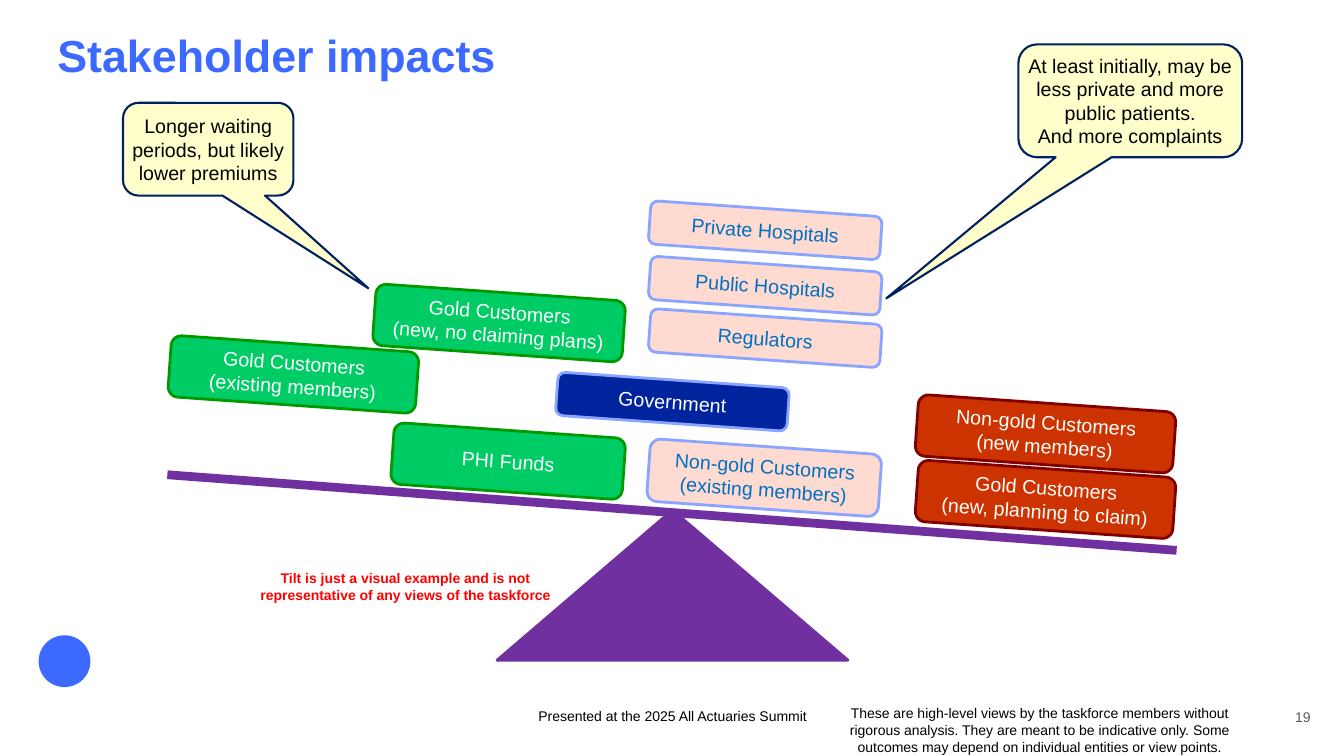
from dataclasses import dataclass

from lxml.etree import SubElement
from pptx import Presentation
from pptx.dml.color import RGBColor
from pptx.enum.shapes import MSO_CONNECTOR as Connector, MSO_SHAPE as Preset
from pptx.enum.text import MSO_ANCHOR as Anchor, PP_ALIGN as Align
from pptx.oxml.ns import qn
from pptx.util import Inches, Pt

COLUMNS, ROWS = 133.3, 75
CELL = Inches(7.5) / ROWS
TILT = 4
FONT = "Arial"

COLORS = {
    "brand": "3C69FF", "page": "5B5B5B", "black": "000000", "warning": "FF0000",
    "seesaw": "7030A0", "note": "FFFFCC", "note_edge": "002060", "white": "FFFFFF",
    "gain": "00CC66", "gain_edge": "009900",
    "neutral": "FFDAD1", "neutral_edge": "8AA5FF", "neutral_text": "0070C0",
    "state": "00249E", "loss": "CC3300", "loss_edge": "800000",
}

# Stakeholder group: fill, edge, text
GROUPS = {
    "gain": ("gain", "gain_edge", "white"),
    "neutral": ("neutral", "neutral_edge", "neutral_text"),
    "state": ("state", "neutral_edge", "white"),
    "loss": ("loss", "loss_edge", "white"),
}

# Group, column, row, width, height, wording
STAKEHOLDERS = [
    ("gain", 22.3, 22.7, 23, 6.1, "PHI Funds"),
    ("gain", 0.2, 14.1, 24.6, 6.1, "Gold Customers\v(existing members)"),
    ("gain", 20.5, 9, 24.8, 6.1, "Gold Customers\v(new, no claiming plans)"),
    ("state", 38.6, 17.7, 23, 4.3, "Government"),
    ("neutral", 47.8, 0.7, 23, 4.3, "Private Hospitals"),
    ("neutral", 47.8, 6.2, 23, 4.3, "Public Hospitals"),
    ("neutral", 47.8, 11.4, 23, 4.3, "Regulators"),
    ("neutral", 47.7, 24.3, 23, 6.2, "Non-gold Customers\v(existing members)"),
    ("loss", 74.3, 26.5, 25.6, 6.1, "Gold Customers\n(new, planning to claim)"),
    ("loss", 74.3, 20, 25.6, 6.1, "Non-gold Customers\n(new members)"),
]


@dataclass
class Box:
    """A region measured in grid columns and rows."""
    left: float
    top: float
    width: float
    height: float

    def within(self, column, row, width, height):
        return Box(self.left + column, self.top + row, width, height)

    def lengths(self):
        return [round(n * CELL) for n in (self.left, self.top, self.width, self.height)]


def color(name):
    return RGBColor.from_string(COLORS[name])


def write(frame, wording, size, ink, align=Align.CENTER, anchor=Anchor.MIDDLE,
          bold=False, inset=(0, 0)):
    frame.word_wrap = True
    frame.vertical_anchor = anchor
    frame.margin_left = frame.margin_right = Inches(inset[0])
    frame.margin_top = frame.margin_bottom = Inches(inset[1])
    frame.text = wording
    for paragraph in frame.paragraphs:
        paragraph.alignment = align
        font = paragraph.font
        font.name, font.size, font.bold = FONT, Pt(size), bold
        font.color.rgb = color(ink)


def add_text(slide, box, wording, size, ink, **style):
    write(slide.shapes.add_textbox(*box.lengths()).text_frame, wording, size, ink, **style)


def add_figure(slide, preset, box, fill, edge, weight):
    figure = slide.shapes.add_shape(preset, *box.lengths())
    figure.shadow.inherit = False
    figure.fill.solid()
    figure.fill.fore_color.rgb = color(fill)
    figure.line.color.rgb = color(edge)
    figure.line.width = Pt(weight)
    return figure


def draw_header(slide, box):
    add_text(slide, box, "Stakeholder impacts", 32, "brand", align=Align.LEFT,
             anchor=Anchor.TOP, bold=True, inset=(0.1, 0.05))


def draw_seesaw(slide, box):
    # Fulcrum and beam
    add_figure(slide, Preset.ISOSCELES_TRIANGLE, box.within(32.7, 30.6, 34.8, 14.9),
               "seesaw", "seesaw", 2)
    left, top, width, drop = box.within(0, 27.1, box.width, 7.5).lengths()
    beam = slide.shapes.add_connector(Connector.STRAIGHT, left, top, left + width, top + drop)
    beam.line.color.rgb = color("seesaw")
    beam.line.width = Pt(6.25)
    SubElement(beam.element.spPr, qn("a:effectLst"))

    # Stakeholders tilted with the beam
    for group, *place, wording in STAKEHOLDERS:
        fill, edge, ink = GROUPS[group]
        block = add_figure(slide, Preset.ROUNDED_RECTANGLE, box.within(*place), fill, edge, 2)
        block.rotation = TILT
        write(block.text_frame, wording, 14, ink, inset=(0.1, 0.05))

    # Caveat beside the fulcrum
    add_text(slide, box.within(8.8, 36.3, 29.6, 3.8),
             "Tilt is just a visual example and is not representative of any views "
             "of the taskforce", 10, "warning", bold=True)


def draw_callout(slide, box, tip, wording):
    callout = add_figure(slide, Preset.ROUNDED_RECTANGULAR_CALLOUT, box,
                         "note", "note_edge", 1.5)
    callout.adjustments[0], callout.adjustments[1] = tip
    write(callout.text_frame, wording, 14, "black", inset=(0.02, 0.02))


def draw_footer(slide, box):
    # Plain emblem
    add_figure(slide, Preset.OVAL, box.within(3.9, 0, 5, 5), "brand", "brand", 1)
    # Event, disclaimer and page number
    add_text(slide, box.within(44.2, 6.9, 45, 2),
             "Presented at the 2025 All Actuaries Summit", 10, "black")
    add_text(slide, box.within(84, 7.4, 38.2, 3.8),
             "These are high-level views by the taskforce members without rigorous "
             "analysis. They are meant to be indicative only. Some outcomes may depend "
             "on individual entities or view points.", 10, "black")
    add_text(slide, box.within(125.4, 6.9, 4.6, 2), "19", 10, "page",
             align=Align.RIGHT, anchor=Anchor.BOTTOM)


def main():
    deck = Presentation()
    deck.slide_width, deck.slide_height = round(COLUMNS * CELL), round(ROWS * CELL)
    slide = deck.slides.add_slide(deck.slide_layouts[6])

    draw_header(slide, Box(4.7, 2.3, 127.7, 7.8))
    draw_seesaw(slide, Box(16.6, 20, 100.1, 46))
    draw_callout(slide, Box(12.2, 10.2, 16.9, 9.2), (0.94, 1.5),
                 "Longer waiting periods, but likely lower premiums")
    draw_callout(slide, Box(101, 4.4, 22.2, 11.2), (-1.09, 1.75),
                 "At least initially, may be less private and more public patients.\n"
                 "And more complaints")
    draw_footer(slide, Box(0, 63.1, COLUMNS, 11.9))
    deck.save("out.pptx")


if __name__ == "__main__":
    main()
